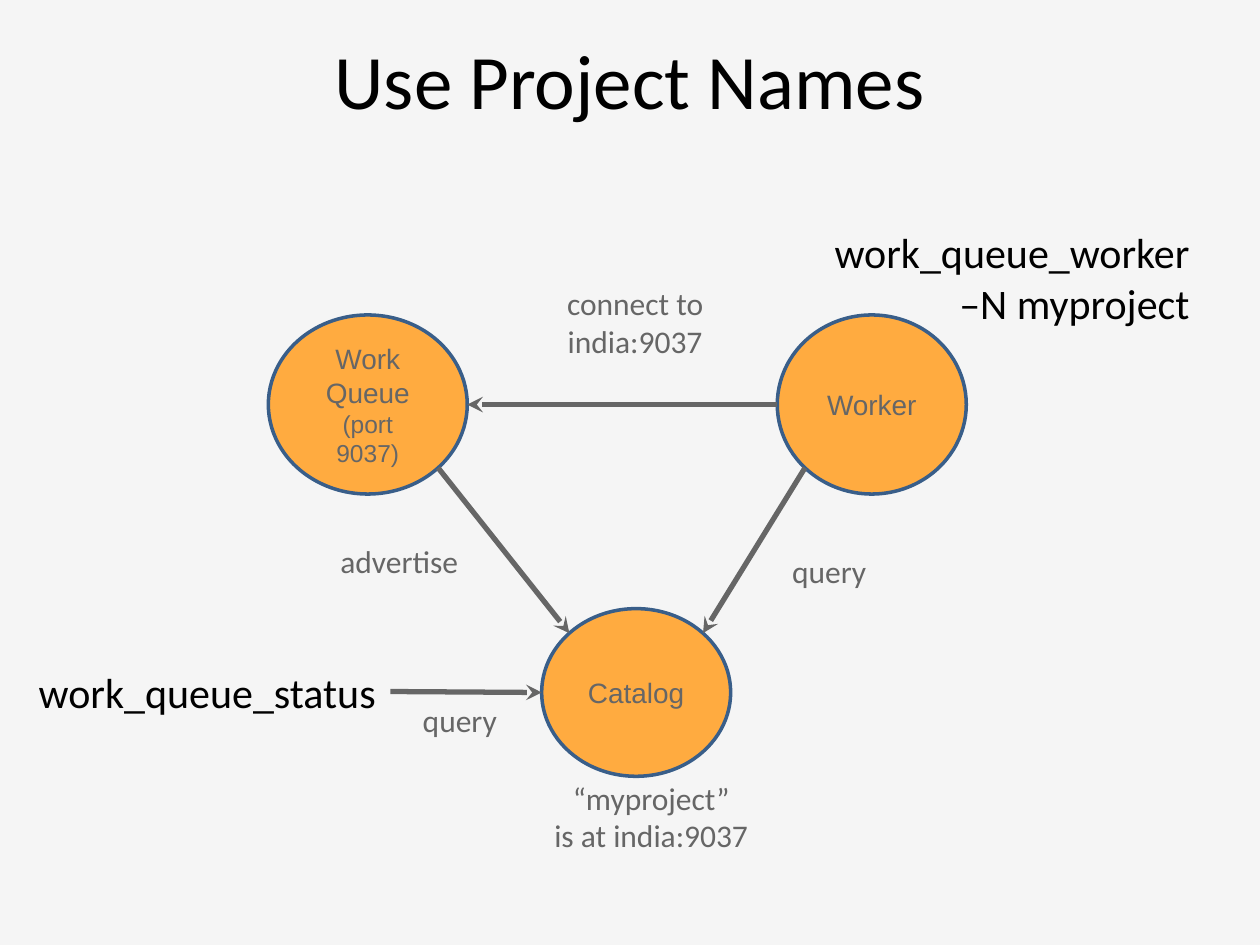
import pptx
import pptx.dml.color
import pptx.enum.shapes
import pptx.enum.text
import pptx.oxml
import pptx.oxml.ns
import pptx.util

Cm = pptx.util.Cm
RGBColor = pptx.dml.color.RGBColor
ALIGN = pptx.enum.text.PP_ALIGN
ANCHOR = pptx.enum.text.MSO_ANCHOR

BACKGROUND = RGBColor(0xF5, 0xF5, 0xF5)
ORANGE = RGBColor(0xFF, 0xAB, 0x40)
BLUE = RGBColor(0x39, 0x5E, 0x89)
GREY = RGBColor(0x66, 0x66, 0x66)
BLACK = RGBColor(0x00, 0x00, 0x00)

TITLE = {"name": "Calibri", "size": 44, "color": BLACK}
COMMAND = {"name": "Calibri", "size": 24, "color": BLACK}
LABEL = {"name": "Calibri", "size": 18, "color": GREY}
NODE = {"name": "Arial", "size": 16, "color": GREY}
NODE_DETAIL = {**NODE, "size": 14}

DIAGONAL = 0.5 ** 0.5
NODES = {
    "queue": ((4.88, 1.9, 4.01, 3.61), [("Work Queue", NODE), ("(port 9037)", NODE_DETAIL)]),
    "worker": ((15.14, 1.9, 3.81, 3.61), [("Worker", NODE)]),
    "catalog": ((10.39, 7.82, 3.81, 3.38), [("Catalog", NODE)]),
}
ARROWS = [
    ("worker", (-1, 0), "queue", (1, 0)),
    ("queue", (DIAGONAL, DIAGONAL), "catalog", (-DIAGONAL, -DIAGONAL)),
    ("worker", (-DIAGONAL, DIAGONAL), "catalog", (DIAGONAL, -DIAGONAL)),
]
STATUS_ARROW_START = (7.34, 9.49)
LABELS = [
    ((15.95, 0, 7.75, 2.31), ["work_queue_worker", "–N myproject"], COMMAND, ALIGN.RIGHT),
    ((0, 8.86, 7.34, 1.27), ["work_queue_status"], COMMAND, ALIGN.LEFT),
    ((10.37, 1.16, 3.81, 1.8), ["connect to", "india:9037"], LABEL, ALIGN.CENTER),
    ((5.97, 6.35, 3.1, 1.02), ["advertise"], LABEL, ALIGN.CENTER),
    ((15.04, 6.55, 2.29, 1.02), ["query"], LABEL, ALIGN.CENTER),
    ((7.65, 9.55, 2.18, 1.02), ["query"], LABEL, ALIGN.CENTER),
    ((10.06, 11.12, 5.08, 1.8), ["“myproject”", "is at india:9037"], LABEL, ALIGN.CENTER),
]


def offset(box, origin):
    return (box[0] + origin[0], box[1] + origin[1], *box[2:])


def to_cm(values):
    return [Cm(value) for value in values]


def write_text(shape, lines, alignment, anchor):
    frame = shape.text_frame
    frame.word_wrap = True
    frame.vertical_anchor = anchor
    for index, (text, style) in enumerate(lines):
        paragraph = frame.add_paragraph() if index else frame.paragraphs[0]
        paragraph.alignment = alignment
        run = paragraph.add_run()
        run.text = text
        formats = {"name": style["name"], "size": pptx.util.Pt(style["size"])}
        for attribute, value in formats.items():
            setattr(run.font, attribute, value)
        run.font.color.rgb = style["color"]


def add_text(slide, box, lines, alignment, anchor=ANCHOR.TOP):
    shape = slide.shapes.add_textbox(*to_cm(box))
    write_text(shape, lines, alignment, anchor)


def add_node(slide, box, lines):
    shape = slide.shapes.add_shape(pptx.enum.shapes.MSO_SHAPE.OVAL, *to_cm(box))
    shape.shadow.inherit = False
    shape.fill.solid()
    shape.fill.fore_color.rgb = ORANGE
    shape.line.color.rgb = BLUE
    shape.line.width = pptx.util.Pt(2)
    write_text(shape, lines, ALIGN.CENTER, ANCHOR.MIDDLE)


def add_arrow(slide, start, end):
    connector = slide.shapes.add_connector(
        pptx.enum.shapes.MSO_CONNECTOR.STRAIGHT, *to_cm(start), *to_cm(end)
    )
    connector.line.color.rgb = GREY
    connector.line.width = pptx.util.Pt(3)
    line = connector.line._get_or_add_ln()
    line.append(pptx.oxml.parse_xml(
        f'<a:tailEnd {pptx.oxml.ns.nsdecls("a")} type="stealth" w="med" len="med"/>'
    ))
    connector._element.spPr.append(
        pptx.oxml.parse_xml(f'<a:effectLst {pptx.oxml.ns.nsdecls("a")}/>')
    )


def rim_point(box, direction):
    left, top, width, height = box
    return left + width * (1 + direction[0]) / 2, top + height * (1 + direction[1]) / 2


def build_title(slide, box):
    add_text(slide, box, [("Use Project Names", TITLE)], ALIGN.CENTER, ANCHOR.MIDDLE)


def build_diagram(slide, origin):
    boxes = {name: offset(box, origin) for name, (box, lines) in NODES.items()}
    for name, (box, lines) in NODES.items():
        add_node(slide, boxes[name], lines)
    for source, source_side, target, target_side in ARROWS:
        add_arrow(
            slide,
            rim_point(boxes[source], source_side),
            rim_point(boxes[target], target_side),
        )
    add_arrow(slide, offset(STATUS_ARROW_START, origin), rim_point(boxes["catalog"], (-1, 0)))
    for box, texts, style, alignment in LABELS:
        add_text(slide, offset(box, origin), [(text, style) for text in texts], alignment)


def main():
    presentation = pptx.Presentation()
    presentation.slide_width = Cm(25.4)
    presentation.slide_height = Cm(19.05)
    slide = presentation.slides.add_slide(presentation.slide_layouts[6])
    slide.background.fill.solid()
    slide.background.fill.fore_color.rgb = BACKGROUND
    build_title(slide, (1.27, 0, 22.86, 3.18))
    build_diagram(slide, (0.53, 4.45))
    presentation.save("out.pptx")


if __name__ == "__main__":
    main()
